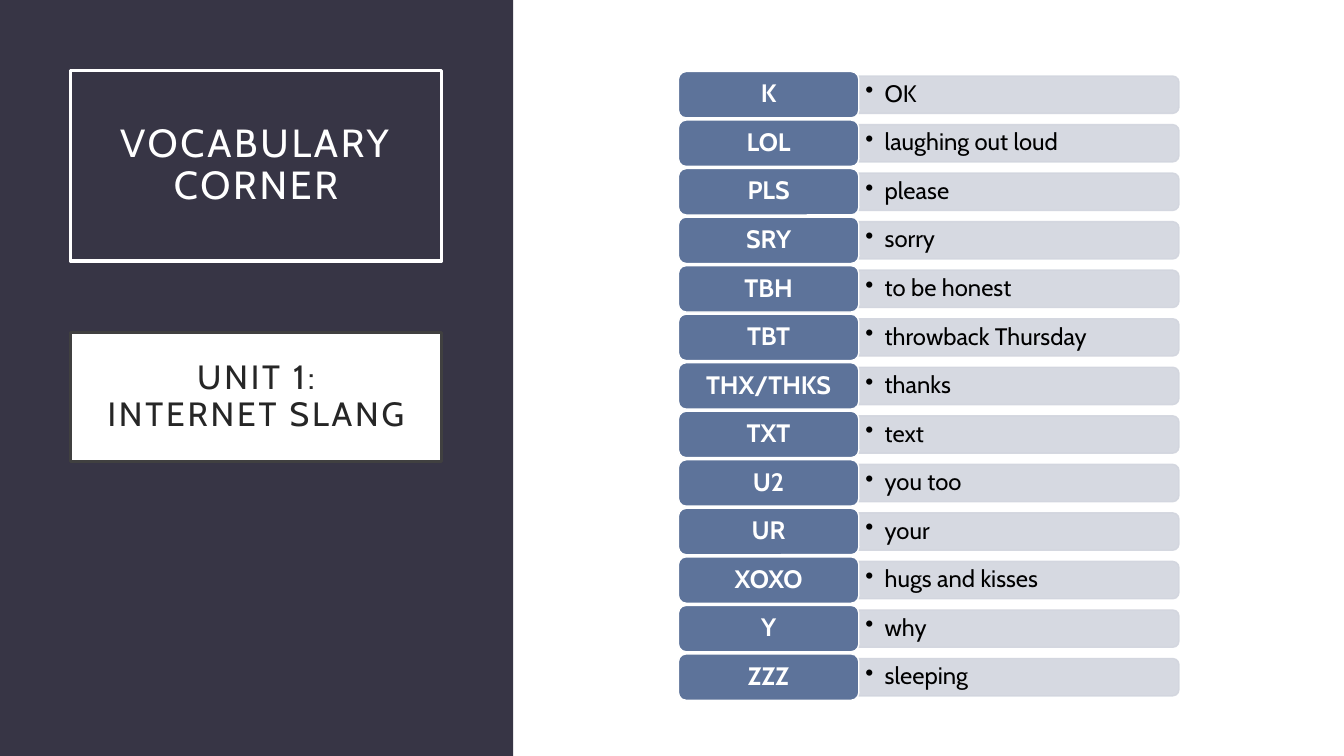
from dataclasses import dataclass

from lxml import etree
from pptx import Presentation
from pptx import util as u
from pptx.dml.color import RGBColor
from pptx.enum import shapes, text
from pptx.oxml.ns import qn

# Colours and font
WHITE = RGBColor(0xFF, 0xFF, 0xFF)
BLACK = RGBColor(0x00, 0x00, 0x00)
NIGHT = RGBColor(0x37, 0x35, 0x45)
STEEL = RGBColor(0x5D, 0x73, 0x9A)
MIST = RGBColor(0xD2, 0xD5, 0xDE)
EDGE = RGBColor(0x40, 0x40, 0x40)
INK = RGBColor(0x26, 0x26, 0x26)
FACE = "Cabin"

# Slide size, and the row rule in percent of the height
WIDE, HIGH = u.Inches(13.33), u.Inches(7.5)
FIRST, STEP = 12.53, 6.42


@dataclass(frozen=True)
class Box:
    """Lengths in percent of the slide's width and height."""
    left: float
    top: float
    width: float
    height: float

    def frame(self) -> tuple[int, int, int, int]:
        return (across(self.left), down(self.top),
                across(self.width), down(self.height))


@dataclass(frozen=True)
class Term:
    slang: str
    sense: str


TERMS = [
    Term("K", "OK"),
    Term("LOL", "laughing out loud"),
    Term("PLS", "please"),
    Term("SRY", "sorry"),
    Term("TBH", "to be honest"),
    Term("TBT", "throwback Thursday"),
    Term("THX/THKS", "thanks"),
    Term("TXT", "text"),
    Term("U2", "you too"),
    Term("UR", "your"),
    Term("XOXO", "hugs and kisses"),
    Term("Y", "why"),
    Term("ZZZ", "sleeping"),
]


def across(share: float) -> int:
    return round(WIDE * share / 100)


def down(share: float) -> int:
    return round(HIGH * share / 100)


def draw(slide, kind, box: Box, fill=None, line=None, weight: float = 1):
    shape = slide.shapes.add_shape(kind, *box.frame())
    shape.shadow.inherit = False
    if fill is None:
        shape.fill.background()
    else:
        shape.fill.solid()
        shape.fill.fore_color.rgb = fill
    if line is None:
        shape.line.fill.background()
    else:
        shape.line.color.rgb = line
        shape.line.width = u.Pt(weight)
    return shape


def write(shape, words: str, *, size: float, color: RGBColor, pad: float,
          bold: bool = False, track: int = 0, bullet: bool = False) -> None:
    frame = shape.text_frame
    frame.word_wrap = True
    frame.vertical_anchor = text.MSO_ANCHOR.MIDDLE
    frame.margin_left = frame.margin_right = across(pad)
    frame.margin_top = frame.margin_bottom = across(pad / 2)
    frame.text = words
    for para in frame.paragraphs:
        if bullet:
            props = para._p.get_or_add_pPr()
            props.set("marL", str(across(1.43)))
            props.set("indent", str(-across(1.43)))
            etree.SubElement(props, qn("a:buChar"), char="•")
        para.alignment = text.PP_ALIGN.LEFT if bullet else text.PP_ALIGN.CENTER
        para.line_spacing = 0.9
        for run in para.runs:
            run.font.name = FACE
            run.font.size = u.Pt(size)
            run.font.bold = bold
            run.font.color.rgb = color
            if track:
                run._r.get_or_add_rPr().set("spc", str(track))


def draw_bar(slide, mid: float) -> None:
    """A bar turned by a quarter, so that its round end is on the right."""
    bar = draw(slide, shapes.MSO_SHAPE.ROUND_2_SAME_RECTANGLE,
               Box(63.87, mid - 2.47, 23.85, 4.94), MIST, MIST)
    turn = (bar.width - bar.height) // 2
    bar.left, bar.top = bar.left + turn, bar.top - turn
    bar.width, bar.height = bar.height, bar.width
    bar.rotation = 90
    for tint in bar._element.spPr.iter(qn("a:srgbClr")):
        etree.SubElement(tint, qn("a:alpha"), val="90000")


def draw_term(slide, term: Term, mid: float) -> None:
    draw_bar(slide, mid)
    sense = slide.shapes.add_textbox(*Box(63.9, mid - 2.2, 23.7, 4.4).frame())
    write(sense, term.sense, size=17, color=BLACK, pad=0.5, bullet=True)
    tag = draw(slide, shapes.MSO_SHAPE.ROUNDED_RECTANGLE,
               Box(50.48, mid - 3.07, 13.42, 6.14), STEEL, WHITE)
    write(tag, term.slang, size=18, color=WHITE, pad=0.65, bold=True)


def main() -> None:
    deck = Presentation()
    deck.slide_width, deck.slide_height = WIDE, HIGH
    slide = deck.slides.add_slide(deck.slide_layouts[6])
    rect = shapes.MSO_SHAPE.RECTANGLE

    # Side panel with title and unit
    draw(slide, rect, Box(0, 0, 38.18, 100), NIGHT)
    title = draw(slide, rect, Box(5.25, 9.33, 27.6, 25.2), None, WHITE, 2.5)
    write(title, "VOCABULARY CORNER", size=28, color=WHITE, pad=1.5, track=200)
    unit = draw(slide, rect, Box(5.25, 44, 27.6, 17.07), WHITE, EDGE, 2.5)
    write(unit, "UNIT 1:\nINTERNET SLANG", size=24, color=INK, pad=1.5, track=200)

    # Slang list
    for row, term in enumerate(TERMS):
        draw_term(slide, term, FIRST + row * STEP)

    deck.save("out.pptx")


if __name__ == "__main__":
    main()
